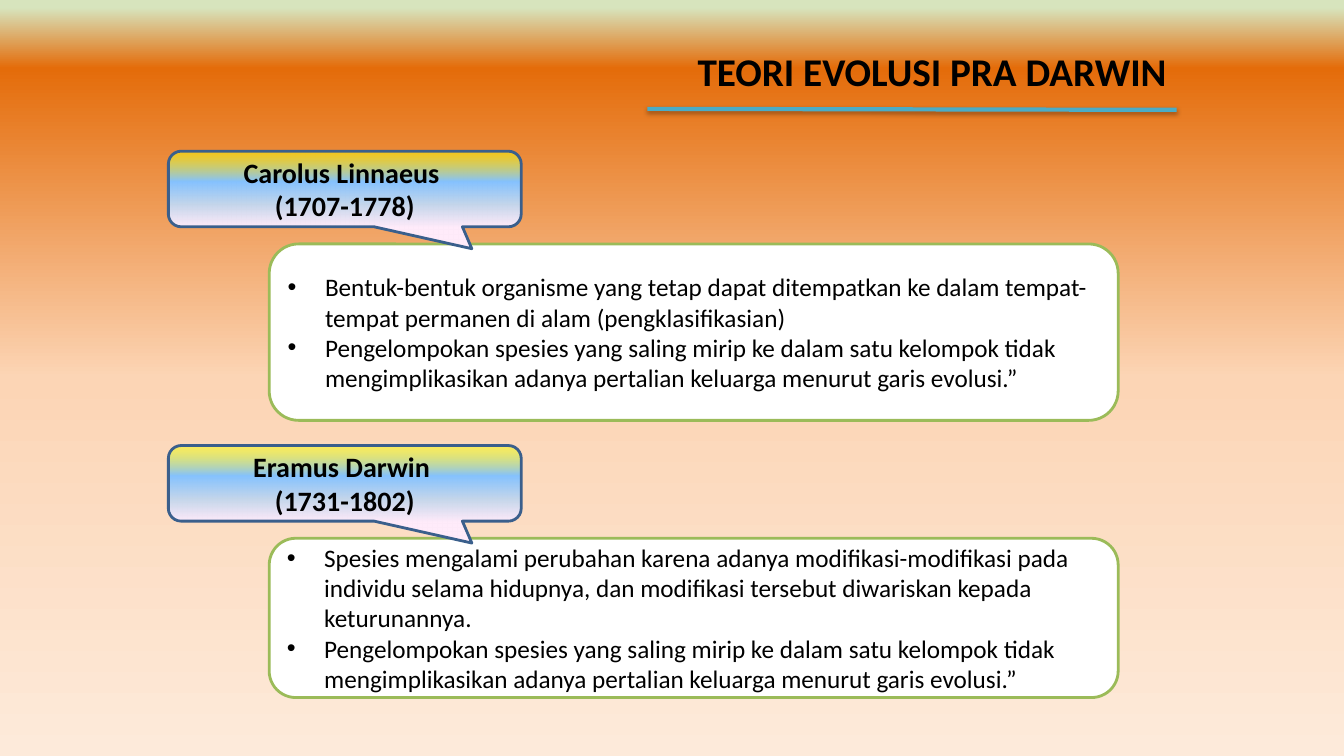
import pptx
import pptx.dml.color
import pptx.enum.shapes
import pptx.enum.text
import pptx.oxml
import pptx.oxml.ns
import pptx.util

Inches = pptx.util.Inches
Pt = pptx.util.Pt
SHAPES = pptx.enum.shapes.MSO_SHAPE
ALIGN = pptx.enum.text.PP_ALIGN
ANCHOR = pptx.enum.text.MSO_ANCHOR
DRAWING = pptx.oxml.ns.nsdecls("a")

SKY = [(0, "D7E4BD", 68), (1, "D7E4BD", 68), (9, "E46C0A", 84),
       (50, "FCD5B5", 100), (100, "FDEADA", 100)]
NAMEPLATE = [(0, "FFFF00", 50), (40, "85C2FF", 100),
             (70, "C4D6EB", 100), (100, "FFEBFA", 100)]
KINSHIP = ("Pengelompokan spesies yang saling mirip ke dalam satu kelompok tidak "
           "mengimplikasikan adanya pertalian keluarga menurut garis evolusi.”")
THINKERS = [
    (1.5, 1.75, ["Carolus Linnaeus ", "(1707-1778)"],
     ["Bentuk-bentuk organisme yang tetap dapat ditempatkan ke dalam "
      "tempat-tempat permanen di alam (pengklasifikasian)", KINSHIP]),
    (4.42, 1.58, ["Eramus Darwin ", "(1731-1802)"],
     ["Spesies mengalami perubahan karena adanya modifikasi-modifikasi pada "
      "individu selama hidupnya, dan modifikasi tersebut diwariskan kepada "
      "keturunannya.", KINSHIP]),
]


def rgb(value):
    return pptx.dml.color.RGBColor.from_string(value)


def write(frame, lines, size=18, bold=False, align=ALIGN.LEFT,
          anchor=ANCHOR.MIDDLE, bullets=False):
    frame.word_wrap = True
    frame.vertical_anchor = anchor
    for number, line in enumerate(lines):
        paragraph = frame.add_paragraph() if number else frame.paragraphs[0]
        paragraph.alignment = align
        run = paragraph.add_run()
        run.text = line
        run.font.name = "Calibri"
        run.font.size = Pt(size)
        run.font.bold = bold
        run.font.color.rgb = rgb("000000")
        if bullets:
            properties = paragraph._p.get_or_add_pPr()
            properties.set("marL", str(Inches(0.37)))
            properties.set("indent", str(Inches(-0.37)))
            for tag in ('buFont {} typeface="Arial"', 'buChar {} char="•"'):
                properties.append(pptx.oxml.parse_xml(f"<a:{tag.format(DRAWING)}/>"))


class TheorySlide:
    outline_width = 2

    def __init__(self, deck):
        self.slide = deck.slides.add_slide(deck.slide_layouts[5])

    def gradient(self, fill, owner, stops):
        fill.gradient()
        fill.gradient_angle = 270
        stop_list = owner.find(".//" + pptx.oxml.ns.qn("a:gsLst"))
        for stop in list(stop_list):
            stop_list.remove(stop)
        for position, color, opacity in stops:
            stop_list.append(pptx.oxml.parse_xml(
                f'<a:gs {DRAWING} pos="{position * 1000}"><a:srgbClr val="{color}">'
                f'<a:alpha val="{opacity * 1000}"/></a:srgbClr></a:gs>'))

    def backdrop(self, stops):
        self.gradient(self.slide.background.fill, self.slide.element, stops)

    def title(self, text, left, top, width, height):
        heading = self.slide.shapes.title
        heading.left, heading.top = Inches(left), Inches(top)
        heading.width, heading.height = Inches(width), Inches(height)
        heading.text_frame.auto_size = pptx.enum.text.MSO_AUTO_SIZE.NONE
        write(heading.text_frame, [text], size=28, bold=True,
              align=ALIGN.RIGHT, anchor=ANCHOR.TOP)

    def underline(self, left, top, right, bottom):
        rule = self.slide.shapes.add_connector(
            pptx.enum.shapes.MSO_CONNECTOR.STRAIGHT,
            Inches(left), Inches(top), Inches(right), Inches(bottom))
        rule.line.color.rgb = rgb("4BACC6")
        rule.line.width = Pt(3)
        rule._element.spPr.append(pptx.oxml.parse_xml(
            f'<a:effectLst {DRAWING}><a:outerShdw blurRad="{Pt(3.1)}" dist="{Pt(1.8)}" '
            'dir="5400000" rotWithShape="0"><a:srgbClr val="000000">'
            '<a:alpha val="35000"/></a:srgbClr></a:outerShdw></a:effectLst>'))

    def outlined(self, preset, left, top, width, height, color):
        shape = self.slide.shapes.add_shape(
            preset, Inches(left), Inches(top), Inches(width), Inches(height))
        shape.shadow.inherit = False
        shape.line.color.rgb = rgb(color)
        shape.line.width = Pt(self.outline_width)
        return shape

    def ideas(self, lines, top, height):
        panel = self.outlined(SHAPES.ROUNDED_RECTANGLE, 2.67, top, 8.42, height, "9BBB59")
        panel.fill.solid()
        panel.fill.fore_color.rgb = rgb("FFFFFF")
        write(panel.text_frame, lines, bullets=True)

    def thinker(self, lines, top):
        callout = self.outlined(SHAPES.ROUNDED_RECTANGULAR_CALLOUT,
                                1.67, top, 3.5, 0.75, "3A5F8C")
        for index, value in enumerate((0.36, 0.79, 0.17)):
            callout.adjustments[index] = value
        self.gradient(callout.fill, callout._element, NAMEPLATE)
        write(callout.text_frame, lines, size=20, bold=True, align=ALIGN.CENTER)


def main():
    deck = pptx.Presentation()
    deck.slide_width, deck.slide_height = Inches(13.33), Inches(7.5)
    theory = TheorySlide(deck)
    theory.backdrop(SKY)
    theory.title("TEORI EVOLUSI PRA DARWIN", 5.42, 0.42, 6.25, 0.57)
    theory.underline(6.42, 1.08, 11.67, 1.09)
    for top, height, name, ideas in THINKERS:
        theory.ideas(ideas, top + 0.92, height)
        theory.thinker(name, top)
    deck.save("out.pptx")


if __name__ == "__main__":
    main()
